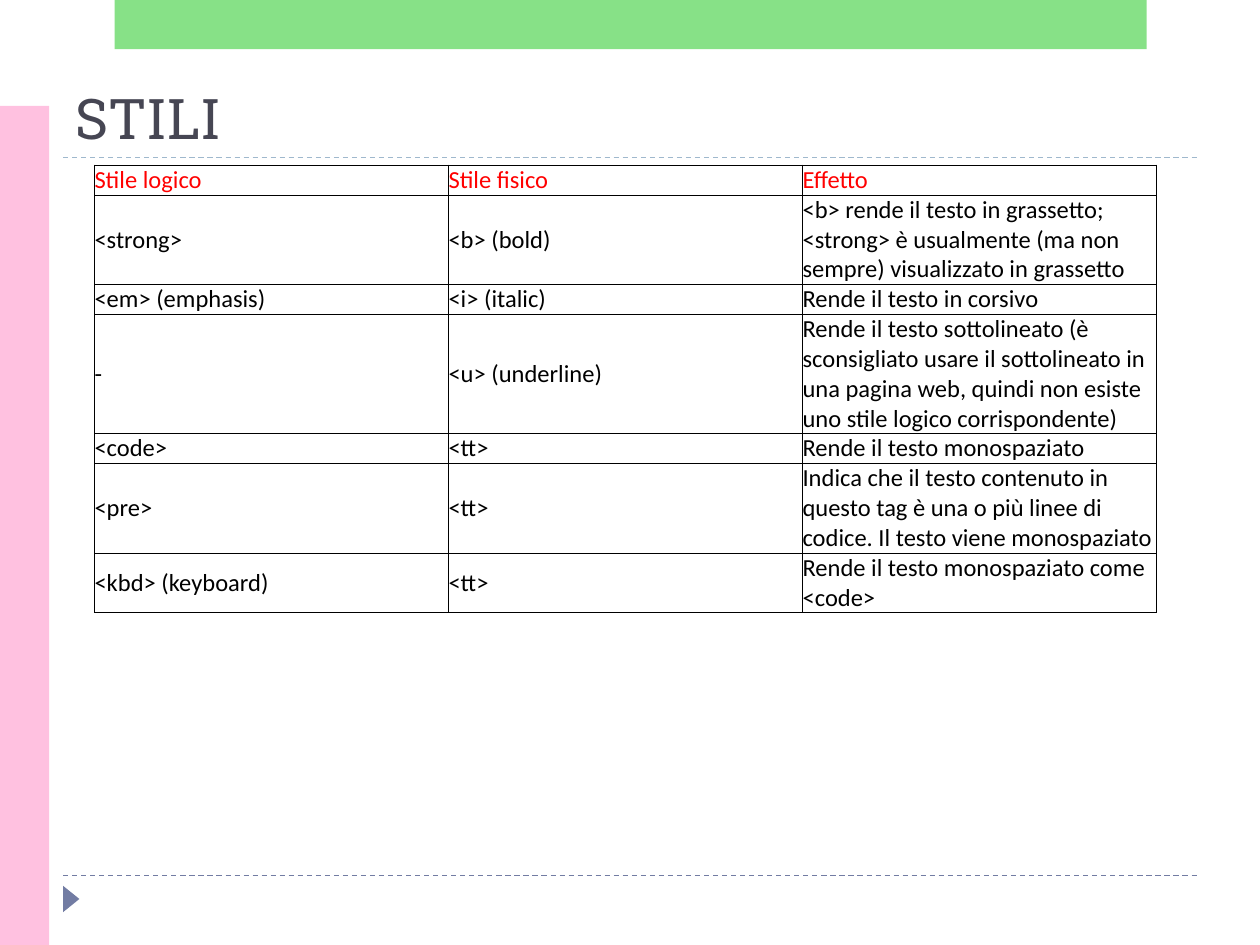
from dataclasses import dataclass

from lxml.etree import SubElement
from pptx import Presentation
from pptx.dml.color import RGBColor
from pptx.enum.dml import MSO_LINE
from pptx.enum.shapes import MSO_CONNECTOR, MSO_SHAPE
from pptx.enum.text import MSO_ANCHOR, MSO_AUTO_SIZE, PP_ALIGN
from pptx.oxml.ns import qn
from pptx.util import Inches, Pt


@dataclass(frozen=True)
class Theme:
    title_ink: str = "464653"
    heading_ink: str = "FF0000"
    body_ink: str = "000000"
    accent: str = "727CA3"
    title_rule: str = "9FB8CD"
    side_band: str = "FFC1E0"
    top_band: str = "62D862"
    top_band_alpha: int = 76
    title_font: str = "Roboto Slab"
    body_font: str = "Calibri"
    title_size: int = 32
    body_size: int = 14
    rule_width: float = 0.75
    border_width: float = 0.5


@dataclass(frozen=True)
class Box:
    """A region in inches."""
    left: float
    top: float
    width: float
    height: float

    def inner(self, x, y, width, height):
        """A box inside this one, offset from its top left corner."""
        return Box(self.left + x, self.top + y, width, height)

    def emu(self):
        return [Inches(n) for n in (self.left, self.top, self.width, self.height)]


THEME = Theme()
PAGE = Box(0, 0, 10, 7.5)
MARGIN = PAGE.width / 20
CONTENT_WIDTH = PAGE.width - 2 * MARGIN
LINE_HEIGHT = 0.235

# Lines of text in the tallest cell, then the three cells of the row
STYLES = [
    (1, "Stile logico", "Stile fisico", "Effetto"),
    (3, "<strong>", "<b> (bold)",
     "<b> rende il testo in grassetto; <strong> è usualmente (ma non sempre) "
     "visualizzato in grassetto"),
    (1, "<em> (emphasis)", "<i> (italic)", "Rende il testo in corsivo"),
    (4, "-", "<u> (underline)",
     "Rende il testo sottolineato (è sconsigliato usare il sottolineato in una "
     "pagina web, quindi non esiste uno stile logico corrispondente)"),
    (1, "<code>", "<tt>", "Rende il testo monospaziato"),
    (3, "<pre>", "<tt>",
     "Indica che il testo contenuto in questo tag è una o più linee di codice. "
     "Il testo viene monospaziato"),
    (2, "<kbd> (keyboard)", "<tt>", "Rende il testo monospaziato come <code>"),
]


def style_font(font, name, size, color):
    font.name = name
    font.size = Pt(size)
    font.bold = False
    font.color.rgb = RGBColor.from_string(color)


def add_block(slide, box, color, preset=MSO_SHAPE.RECTANGLE):
    block = slide.shapes.add_shape(preset, *box.emu())
    block.shadow.inherit = False
    block.fill.solid()
    block.fill.fore_color.rgb = RGBColor.from_string(color)
    block.line.fill.background()
    return block


def add_rule(slide, y, color):
    """Dashed line between the side margins."""
    rule = slide.shapes.add_connector(
        MSO_CONNECTOR.STRAIGHT, Inches(MARGIN), Inches(y),
        Inches(MARGIN + CONTENT_WIDTH), Inches(y))
    rule.line.color.rgb = RGBColor.from_string(color)
    rule.line.width = Pt(THEME.rule_width)
    rule.line.dash_style = MSO_LINE.DASH
    SubElement(rule._element.spPr, qn("a:effectLst"))


def add_frame(slide, box):
    """Bands along the top and left edges, and the footer marker."""
    add_block(slide, box.inner(0, 0.84, 0.39, box.height - 0.84), THEME.side_band)
    top_band = add_block(slide, box.inner(0.91, 0, 8.19, 0.39), THEME.top_band)
    color = top_band._element.spPr.find(qn("a:solidFill"))[0]
    SubElement(color, qn("a:alpha"), val=str(THEME.top_band_alpha * 1000))

    add_rule(slide, 6.95, THEME.accent)
    marker = add_block(slide, box.inner(0.46, 7.07, 0.21, 0.13), THEME.accent,
                       MSO_SHAPE.ISOSCELES_TRIANGLE)
    marker.rotation = 90


def add_title(slide, box, wording):
    title = slide.shapes.title
    title.left, title.top, title.width, title.height = box.emu()
    frame = title.text_frame
    frame.text = wording
    frame.auto_size = MSO_AUTO_SIZE.NONE
    frame.vertical_anchor = MSO_ANCHOR.BOTTOM
    heading = frame.paragraphs[0]
    heading.alignment = PP_ALIGN.LEFT
    style_font(heading.runs[0].font, THEME.title_font, THEME.title_size,
               THEME.title_ink)
    add_rule(slide, box.top + box.height, THEME.title_rule)


def add_borders(cell):
    properties = cell._tc.get_or_add_tcPr()
    for position, side in enumerate(("a:lnL", "a:lnR", "a:lnT", "a:lnB")):
        border = properties.makeelement(
            qn(side), {"w": str(Pt(THEME.border_width))})
        fill = SubElement(border, qn("a:solidFill"))
        SubElement(fill, qn("a:srgbClr"), val=THEME.body_ink)
        properties.insert(position, border)


def fill_cell(cell, wording, color):
    cell.text = wording
    cell.vertical_anchor = MSO_ANCHOR.MIDDLE
    cell.margin_left = cell.margin_right = 0
    cell.margin_top = cell.margin_bottom = 0
    cell.fill.background()
    add_borders(cell)
    style_font(cell.text_frame.paragraphs[0].runs[0].font, THEME.body_font,
               THEME.body_size, color)


def add_styles_table(slide, box, styles):
    column_count = len(styles[0]) - 1
    table = slide.shapes.add_table(len(styles), column_count, *box.emu()).table
    table.first_row = table.horz_banding = False
    for column in table.columns:
        column.width = Inches(box.width / column_count)
    for index, (lines, *wordings) in enumerate(styles):
        table.rows[index].height = Inches(lines * LINE_HEIGHT)
        color = THEME.body_ink if index else THEME.heading_ink
        for cell, wording in zip(table.rows[index].cells, wordings):
            fill_cell(cell, wording, color)


def main():
    presentation = Presentation()
    presentation.slide_width = Inches(PAGE.width)
    presentation.slide_height = Inches(PAGE.height)
    slide = presentation.slides.add_slide(presentation.slide_layouts[5])

    add_frame(slide, PAGE)
    add_title(slide, PAGE.inner(MARGIN, 0.55, CONTENT_WIDTH, 0.7), "STILI")
    table_height = LINE_HEIGHT * sum(row[0] for row in STYLES)
    add_styles_table(slide, PAGE.inner(0.75, 1.31, 8.43, table_height), STYLES)

    presentation.save("out.pptx")


if __name__ == "__main__":
    main()
